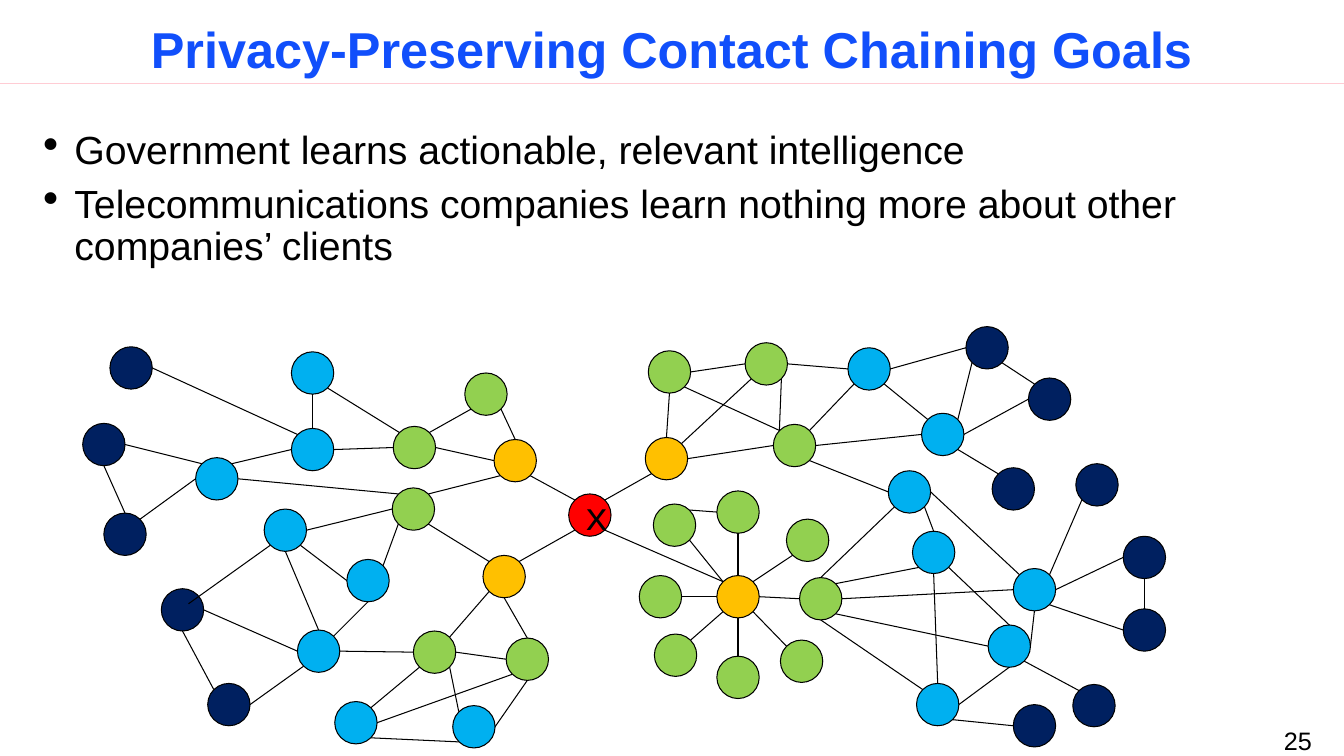
from dataclasses import dataclass

from lxml import etree
from pptx import Presentation
from pptx.dml.color import RGBColor
from pptx.enum.shapes import MSO_CONNECTOR, MSO_SHAPE
from pptx.enum.text import MSO_ANCHOR, PP_ALIGN
from pptx.oxml.ns import qn
from pptx.util import Pt

LINE, OVAL = MSO_CONNECTOR.STRAIGHT, MSO_SHAPE.OVAL
TOP, MIDDLE, BOTTOM = MSO_ANCHOR.TOP, MSO_ANCHOR.MIDDLE, MSO_ANCHOR.BOTTOM
LEFT, CENTER, RIGHT = PP_ALIGN.LEFT, PP_ALIGN.CENTER, PP_ALIGN.RIGHT
PX = 9144  # 100 px to the inch


@dataclass(frozen=True)
class Theme:
    ink: str = "000000"
    title: str = "114FFB"
    rule: str = "FFCCD4"
    green: str = "92D050"
    amber: str = "FFC000"
    red: str = "FF0000"
    sky: str = "00B0F0"
    navy: str = "002060"
    sans: str = "Arial"
    mono: str = "Courier New"
    head: int = 36
    body: int = 28
    foot: int = 18
    hair: float = 0.25
    edge: float = 0.75


T = Theme()
SIZE = 42  # diameter of a node
NEAR, MID, FAR = 6, 21, 36
SITES = {
    "n": (MID, 0), "ne": (FAR, NEAR), "e": (SIZE, MID), "se": (FAR, FAR),
    "s": (MID, SIZE), "sw": (NEAR, FAR), "w": (0, MID), "nw": (NEAR, NEAR),
    "in": (27, 15),
}

# Node places relative to the graph's box; a node is named by letter and index
NODES = {
    "g": (T.green, [
        (561, 24), (308, 99), (685, 97), (567, 305), (629, 163), (657, 16),
        (379, 46), (307, 160), (328, 302), (420, 309), (692, 311), (711, 249),
        (566, 176), (552, 247), (629, 327), (698, 191)]),
    "a": (T.amber, [(558, 110), (629, 247), (408, 112), (397, 227)]),
    "r": (T.red, [(482, 166)]),
    "s": (T.sky, [
        (262, 231), (207, 25), (207, 101), (180, 181), (213, 301), (759, 21),
        (832, 86), (799, 143), (823, 203), (898, 296), (923, 240), (827, 354),
        (112, 130), (367, 376), (250, 372)]),
    "n": (T.navy, [
        (27, 20), (0, 96), (21, 185), (78, 260), (124, 354), (982, 355),
        (1032, 280), (1032, 208), (923, 375), (985, 136), (902, 140),
        (938, 51), (876, 0)]),
}

# Each edge runs from node.site to node.site
INNER = """
r0.nw a2.se, a2.n g6.se, a2.w g1.e, r0.sw a3.ne, a3.s g9.n, g8.ne a3.sw,
a3.nw g7.se, g7.ne a2.sw, r0.ne a0.sw, a0.n g0.s, a0.ne g5.sw, a0.e g2.w,
r0.se a1.nw, a1.w g13.e, g3.ne a1.sw, a1.s g14.n, g10.nw a1.se, g11.w a1.e,
g15.sw a1.ne, g4.s a1.n, g12.se a1.nw, g1.ne g6.sw, g0.e g5.w, g9.w g8.e,
g5.se g2.nw, g12.ne g4.w, g0.se g2.nw
"""
WEST = """
g1.nw s1.se, g1.w s2.e, g7.w s3.e, g7.sw s0.ne, g8.w s4.e, s0.s s4.ne,
g9.s s13.e, s13.nw g8.se, g8.sw s14.ne, g7.nw s12.e, s3.se s0.w, s3.s s4.n,
s13.sw s14.se, s14.e g9.sw, s2.w s12.ne, s1.s s2.n, s2.nw n0.e, s12.nw n1.e,
s12.w n2.ne, s3.sw n3.in, s4.w n3.e, s4.sw n4.e, n1.s n2.n, n3.s n4.nw
"""
EAST = """
s5.w g5.e, s5.sw g2.ne, s6.w g2.e, s7.w g2.se, s7.sw g11.n, g11.ne s8.sw,
g11.e s10.w, s9.w g11.se, s11.nw g11.s, s5.se s6.nw, s7.se s8.n, s7.e s10.nw,
s9.n s8.se, s11.e s9.s, s8.s s11.n, s10.s s9.e, s6.ne n12.sw, s6.e n11.w,
n10.nw s6.se, s10.ne n9.sw, s10.e n7.w, s10.se n6.w, n5.nw s9.se, n8.w s11.se,
n7.s n6.n, n12.se n11.nw, n12.w s5.e
"""


def scale(*nums):
    return [n * PX for n in nums]


def rgb(code):
    return RGBColor.from_string(code)


def style(para, size, color=T.ink, face=T.sans, bold=False, align=LEFT):
    para.alignment = align
    font = para.font
    font.size, font.name, font.bold = Pt(size), face, bold
    font.color.rgb = rgb(color)


def bullet(para):
    props = para._p.get_or_add_pPr()
    props.set("marL", str(31 * PX))
    props.set("indent", str(-31 * PX))
    tint = etree.SubElement(props, qn("a:buClr"))
    etree.SubElement(tint, qn("a:srgbClr"), val=T.ink)
    etree.SubElement(props, qn("a:buSzPct"), val="115000")
    etree.SubElement(props, qn("a:buChar"), char="•")


def text(slide, box, lines, anchor=TOP):
    """Add a wrapped text box and return its paragraphs."""
    frame = slide.shapes.add_textbox(*scale(*box)).text_frame
    frame.word_wrap = True
    frame.vertical_anchor = anchor
    frame.text = "\n".join(lines)
    return frame.paragraphs


def link(slide, start, end, color=T.ink, width=T.edge):
    line = slide.shapes.add_connector(LINE, *scale(*start, *end))
    line.line.color.rgb = rgb(color)
    line.line.width = Pt(width)
    etree.SubElement(line._element.spPr, qn("a:effectLst"))


def header(slide, box, title):
    x, y, w, h = box
    para = text(slide, box, [title], BOTTOM)[0]
    para.line_spacing = 0.9
    style(para, T.head, T.title, bold=True, align=CENTER)
    link(slide, (x, y + h - 1), (x + w, y + h - 1), T.rule, T.hair)


def goals(slide, box, lines):
    for para in text(slide, box, lines):
        para.line_spacing = 0.9
        para.space_before = Pt(8)
        bullet(para)
        style(para, T.body)


def node(slide, x, y, color):
    dot = slide.shapes.add_shape(OVAL, *scale(x, y, SIZE, SIZE))
    dot.shadow.inherit = False
    dot.fill.solid()
    dot.fill.fore_color.rgb = rgb(color)
    dot.line.color.rgb = rgb(T.ink)
    dot.line.width = Pt(T.edge)
    return dot


def graph(slide, left, top):
    spots, dots = {}, {}
    for kind, (color, places) in NODES.items():
        for i, (x, y) in enumerate(places):
            name = f"{kind}{i}"
            spots[name] = left + x, top + y
            dots[name] = node(slide, *spots[name], color)

    frame = dots["r0"].text_frame
    frame.text = "x"
    frame.vertical_anchor = MIDDLE
    style(frame.paragraphs[0], T.body, face=T.mono, align=CENTER)

    def point(end):
        name, site = end.split(".")
        (x, y), (dx, dy) = spots[name], SITES[site]
        return x + dx, y + dy

    for part in (INNER, WEST, EAST):
        for edge in part.split(","):
            link(slide, *map(point, edge.split()))


def number(slide, box, value):
    style(text(slide, box, [value])[0], T.foot, align=RIGHT)


def main():
    deck = Presentation()
    deck.slide_width, deck.slide_height = scale(1333, 750)
    slide = deck.slides.add_slide(deck.slide_layouts[6])
    number(slide, (1211, 715, 100, 40), "25")
    header(slide, (0, 17, 1333, 67), "Privacy-Preserving Contact Chaining Goals")
    goals(slide, (33, 125, 1278, 172), [
        "Government learns actionable, relevant intelligence",
        "Telecommunications companies learn nothing more about other "
        "companies’ clients",
    ])
    graph(slide, 82, 324)
    deck.save("out.pptx")


if __name__ == "__main__":
    main()
